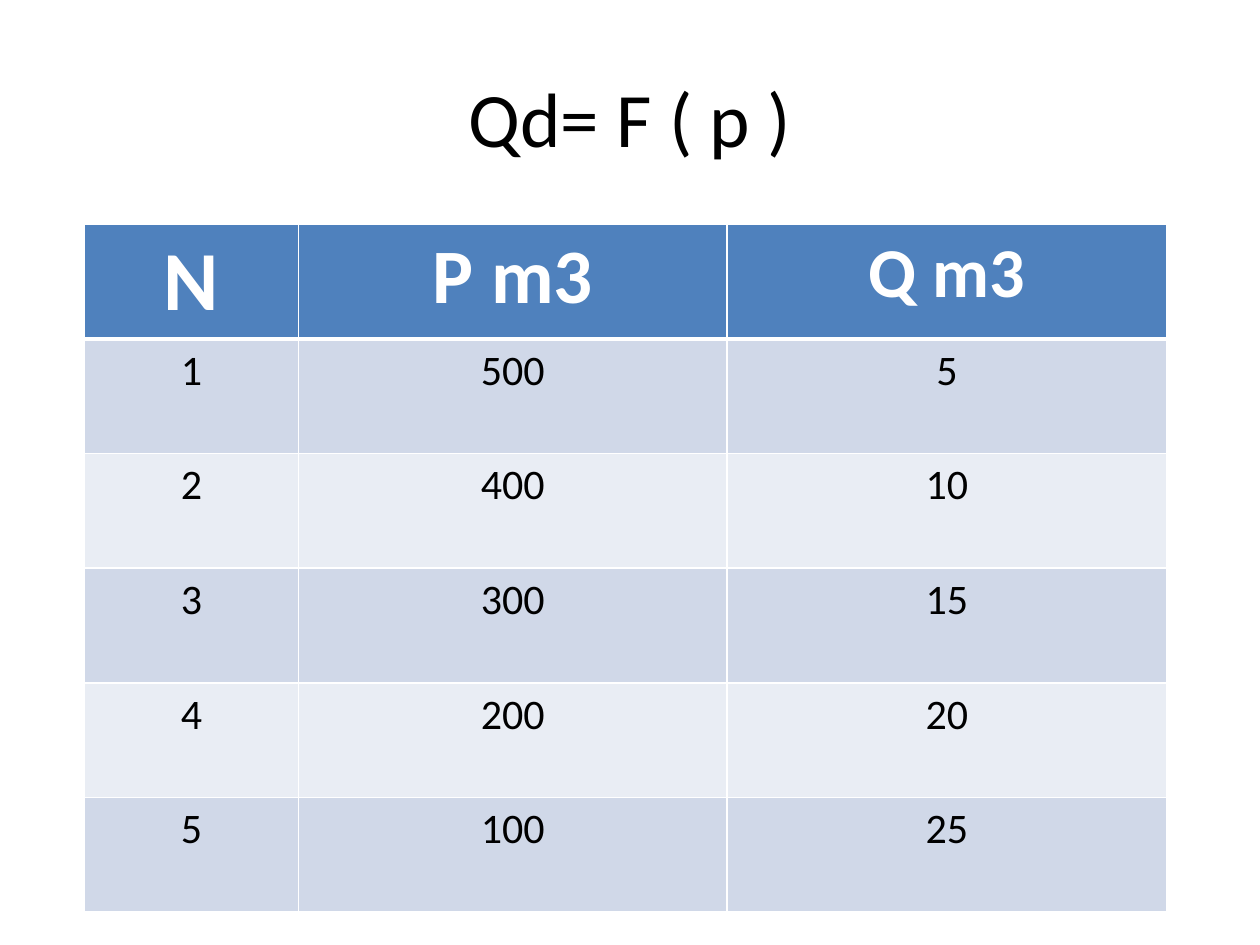
from pptx import Presentation
from pptx.dml.color import RGBColor
from pptx.enum.text import MSO_ANCHOR, PP_ALIGN
from pptx.oxml.ns import qn
from pptx.util import Inches, Pt
from lxml.etree import SubElement

TITLE = "Qd= F ( p )"
HEADER = ["N", "P m3", "Q m3"]
HEADER_SIZES = [48, 44, 40]
ROWS = [
    [1, 500, 5],
    [2, 400, 10],
    [3, 300, 15],
    [4, 200, 20],
    [5, 100, 25],
]
COL_WIDTHS = [1.7, 3.4, 3.49]
ROW_HEIGHT = 0.91
HEADER_FILL = "4F81BD"
BAND_FILLS = ["D0D8E8", "E9EDF4"]
WHITE, BLACK = "FFFFFF", "000000"


def color(value):
    return RGBColor.from_string(value)


def write(tf, text, size, ink, bold=False):
    p = tf.paragraphs[0]
    p.text = text
    p.alignment = PP_ALIGN.CENTER
    p.font.name = "Calibri"
    p.font.size = Pt(size)
    p.font.bold = bold
    p.font.color.rgb = color(ink)


def set_borders(cell, bottom, top):
    """Draw white cell borders; bottom and top are widths in points."""
    tc_pr = cell._tc.get_or_add_tcPr()
    widths = {"a:lnL": 1, "a:lnR": 1, "a:lnT": top, "a:lnB": bottom}
    for i, (tag, width) in enumerate(widths.items()):
        ln = SubElement(tc_pr, qn(tag), w=str(Pt(width)))
        tc_pr.insert(i, ln)  # borders come before the fill
        fill = SubElement(ln, qn("a:solidFill"))
        SubElement(fill, qn("a:srgbClr"), val=WHITE)


prs = Presentation()
prs.slide_width, prs.slide_height = Inches(10), Inches(7.5)
s = prs.slides.add_slide(prs.slide_layouts[6])

title = s.shapes.add_textbox(Inches(0.5), Inches(0.3), Inches(9), Inches(1.25))
tf = title.text_frame
tf.word_wrap = True
tf.vertical_anchor = MSO_ANCHOR.MIDDLE
write(tf, TITLE, 44, BLACK)

row_count = len(ROWS) + 1
table = s.shapes.add_table(
    row_count, len(HEADER), Inches(0.67), Inches(1.78),
    Inches(sum(COL_WIDTHS)), Inches(ROW_HEIGHT * row_count)).table
for col, width in zip(table.columns, COL_WIDTHS):
    col.width = Inches(width)

for r, values in enumerate([HEADER] + ROWS):
    table.rows[r].height = Inches(ROW_HEIGHT)
    is_header = r == 0
    for c, value in enumerate(values):
        cell = table.cell(r, c)
        cell.fill.solid()
        cell.fill.fore_color.rgb = color(
            HEADER_FILL if is_header else BAND_FILLS[(r - 1) % 2])
        set_borders(cell, bottom=3 if is_header else 1, top=3 if r == 1 else 1)
        write(cell.text_frame, str(value),
              HEADER_SIZES[c] if is_header else 24,
              WHITE if is_header else BLACK, bold=is_header)

prs.save("out.pptx")
